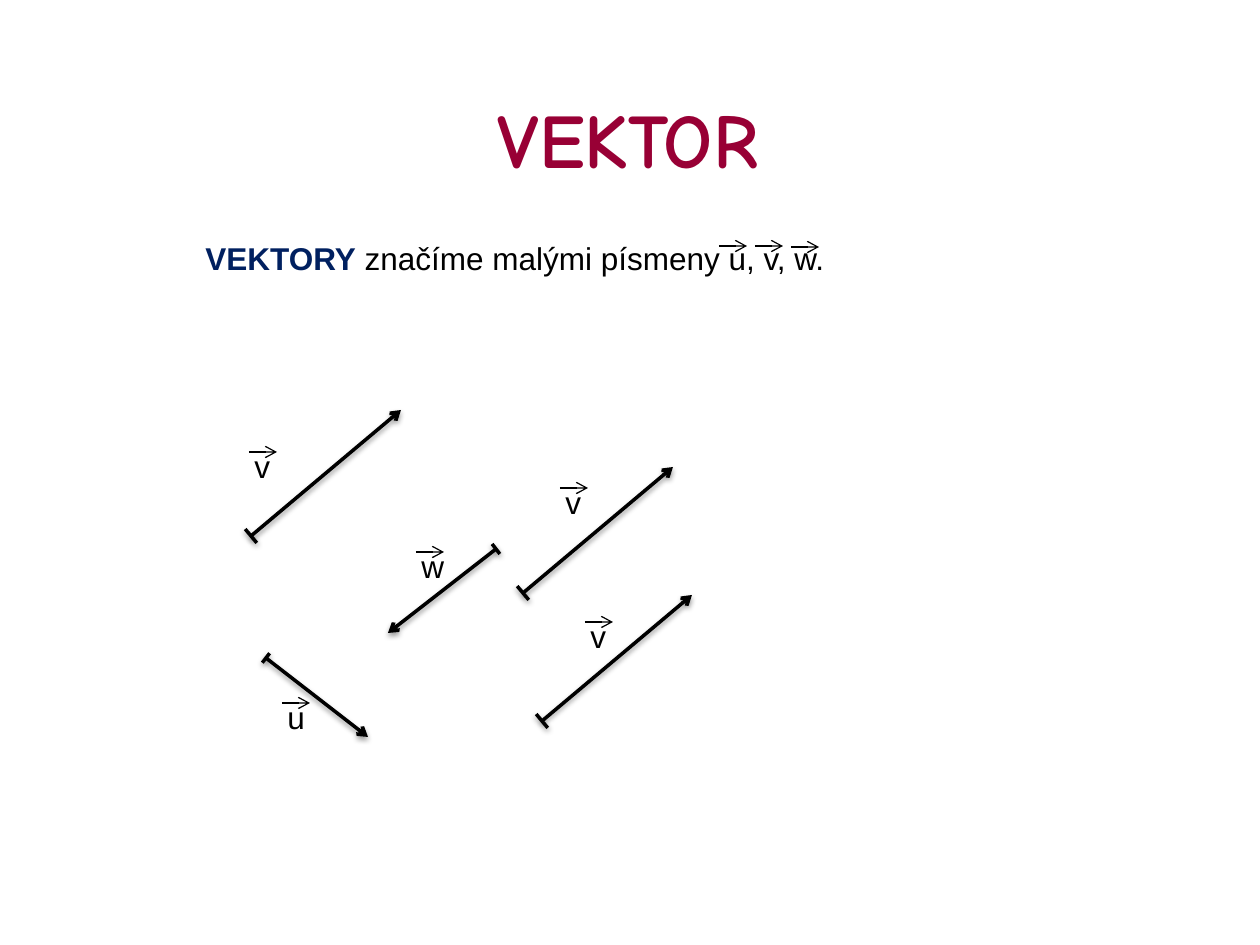
from lxml import etree
from pptx import Presentation
from pptx.dml.color import RGBColor
from pptx.enum.shapes import MSO_CONNECTOR
from pptx.enum.text import MSO_ANCHOR, MSO_AUTO_SIZE, PP_ALIGN
from pptx.oxml import parse_xml
from pptx.oxml.ns import nsdecls, qn
from pptx.util import Pt

STRAIGHT = MSO_CONNECTOR.STRAIGHT
MIDDLE = MSO_ANCHOR.MIDDLE
CENTER = PP_ALIGN.CENTER
FIT_SHAPE = MSO_AUTO_SIZE.SHAPE_TO_FIT_TEXT
PX = 914400 / 126

THEME = {
    "title_font": "Comic Neue", "body_font": "Arial",
    "title": RGBColor(0x98, 0x00, 0x35),
    "accent": RGBColor(0x00, 0x20, 0x60),
    "ink": RGBColor(0x00, 0x00, 0x00),
    "title_size": Pt(44), "body_size": Pt(18),
    "vector_line": Pt(2), "mark_line": Pt(0.75),
}
SHADOW = (
    f'<a:effectLst {nsdecls("a")}><a:outerShdw blurRad="40000" dist="20000" dir="5400000" '
    'rotWithShape="0"><a:srgbClr val="000000"><a:alpha val="38000"/></a:srgbClr>'
    '</a:outerShdw></a:effectLst>'
)
NO_SHADOW = f'<a:effectLst {nsdecls("a")}/>'


def add_line(shapes, start, end, width, arrow=True, effect=NO_SHADOW):
    points = [round(value * PX) for value in (*start, *end)]
    connector = shapes.add_connector(STRAIGHT, *points)
    connector.line.color.rgb = THEME["ink"]
    connector.line.width = width
    if arrow:
        etree.SubElement(connector.line._get_or_add_ln(), qn("a:tailEnd"), type="arrow")
    connector._element.spPr.append(parse_xml(effect))


def add_text(shapes, left, top, width, parts):
    box = shapes.add_textbox(*(round(value * PX) for value in (left, top, width, 50)))
    text_frame = box.text_frame
    text_frame.word_wrap = False
    text_frame.auto_size = FIT_SHAPE
    for text, color, bold in parts:
        run = text_frame.paragraphs[0].add_run()
        run.text = text
        run.font.name = THEME["body_font"]
        run.font.size = THEME["body_size"]
        run.font.bold = bold
        run.font.color.rgb = color


presentation = Presentation()
presentation.slide_width = round(1260 * PX)
presentation.slide_height = round(945 * PX)
slide = presentation.slides.add_slide(presentation.slide_layouts[5])

# Title
title = slide.shapes.title
title.left, title.top, title.width, title.height = (
    round(value * PX) for value in (82, 59, 1092, 158))
title.text_frame.text = "VEKTOR"
title.text_frame.vertical_anchor = MIDDLE
paragraph = title.text_frame.paragraphs[0]
paragraph.alignment = CENTER
title_font = paragraph.runs[0].font
title_font.name = THEME["title_font"]
title_font.size = THEME["title_size"]
title_font.bold = True
title_font.color.rgb = THEME["title"]

# Sentence
add_text(slide.shapes, 193, 233, 646, [
    ("VEKTORY", THEME["accent"], True),
    (" značíme malými písmeny u, v, w.", THEME["ink"], False),
])

# Vectors: start point and displacement, with a perpendicular tick at the start
V, W, U = (150, -126), (-108, 84), (102, 79)
TICK_RATIO = 0.046
for (x, y), (dx, dy) in [((251, 536), V), ((523, 593), V), ((496, 549), W),
                         ((266, 658), U), ((542, 721), V)]:
    group = slide.shapes.add_group_shape()
    add_line(group.shapes, (x, y), (x + dx, y + dy), THEME["vector_line"], effect=SHADOW)
    tick_x, tick_y = -dy * TICK_RATIO, dx * TICK_RATIO
    add_line(group.shapes, (x - tick_x, y - tick_y), (x + tick_x, y + tick_y),
             THEME["vector_line"], arrow=False, effect=SHADOW)

# Vector marks over the letters in the sentence
MARK = 28
for x, y in [(719, 246), (755, 246), (791, 247)]:
    add_line(slide.shapes, (x, y), (x + MARK, y), THEME["mark_line"])

# Labels beside the vectors, each with its mark
for letter, left, top, width in [("v", 242, 441, 42), ("u", 275, 692, 43),
                                 ("v", 553, 477, 42), ("w", 409, 541, 48),
                                 ("v", 578, 611, 42)]:
    group = slide.shapes.add_group_shape()
    add_text(group.shapes, left, top, width, [(letter, THEME["ink"], False)])
    mark_x, mark_y = left + 7, top + 11
    add_line(group.shapes, (mark_x, mark_y), (mark_x + MARK, mark_y), THEME["mark_line"])

presentation.save("out.pptx")
